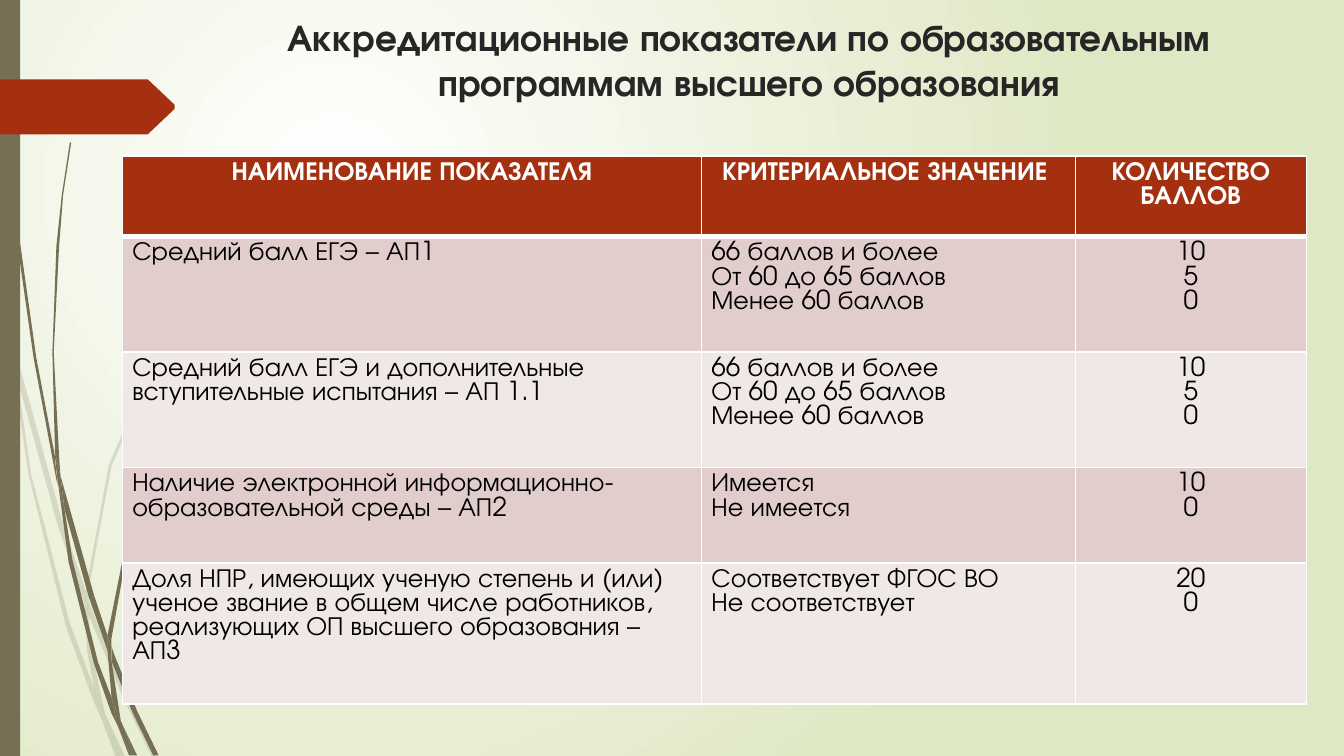
from lxml.etree import SubElement
from pptx import Presentation
from pptx.dml.color import RGBColor
from pptx.enum.shapes import MSO_SHAPE
from pptx.enum.text import MSO_ANCHOR, PP_ALIGN
from pptx.oxml.ns import qn
from pptx.util import Pt

FONT = "TeX Gyre Adventor"
OLIVE, RUST, WHITE = "766F54", "A53010", "FFFFFF"
BANDS = ("E1CDCC", "F0E8E7")
GRID = 0.72  # points per unit of the outlines below

PALE_BLADES = [
    [(8, 263), (6, 241), (0, 211), (0, 224), (8, 258)],
    [(43, 391), (63, 449), (64, 440), (47, 390), (11, 259), (13, 282)],
    [(69, 455), (66, 447), (66, 458), (92, 520), (113, 563), (116, 563), (95, 519)],
    [(89, 563), (93, 563), (79, 533)],
    [(70, 512), (52, 464), (23, 352), (13, 282), (8, 263), (21, 352), (49, 466),
     (69, 520), (76, 536), (74, 530)],
    [(63, 449), (65, 485), (70, 512), (72, 519), (79, 533), (78, 530), (68, 484),
     (66, 458), (66, 456)],
    [(66, 438), (83, 347), (120, 261), (171, 184), (201, 148), (217, 131), (234, 115),
     (217, 131), (201, 148), (171, 183), (118, 261), (81, 346), (64, 438), (64, 440),
     (66, 447)],
    [(76, 536), (86, 563), (89, 563)],
    [(66, 456), (66, 458), (66, 447), (64, 440), (63, 449)],
    [(72, 519), (70, 512), (74, 530), (76, 536), (89, 563), (79, 533)],
]
DARK_BLADES = [
    [(5, 82), (12, 175), (25, 266), (42, 357), (43, 361), (41, 343), (41, 340),
     (27, 266), (14, 174), (6, 82), (3, 36), (3, 0), (2, 0), (3, 36)],
    [(66, 444), (80, 484), (80, 475), (80, 473), (70, 443), (45, 354), (48, 379)],
    [(85, 487), (83, 481), (83, 492), (99, 531), (114, 562), (118, 562), (102, 529)],
    [(83, 519), (73, 493), (54, 417), (48, 379), (43, 358), (51, 418), (70, 494),
     (83, 531), (88, 541), (87, 538)],
    [(45, 354), (44, 340), (40, 262), (44, 183), (47, 145), (53, 106), (52, 106),
     (46, 145), (42, 183), (39, 262), (41, 337)],
    [(100, 562), (102, 562), (91, 539)],
    [(43, 358), (48, 379), (45, 354), (41, 337), (41, 340)],
    [(83, 475), (94, 414), (119, 357), (153, 305), (173, 281), (184, 269), (196, 258),
     (195, 258), (184, 269), (173, 280), (153, 304), (117, 356), (92, 413), (80, 473),
     (83, 481)],
    [(88, 541), (96, 562), (98, 562)],
    [(80, 484), (83, 519), (87, 530), (91, 539), (90, 537), (83, 492), (81, 488)],
    [(80, 484), (81, 488), (83, 492), (83, 481), (80, 473), (80, 475)],
    [(87, 530), (83, 519), (87, 538), (88, 541), (98, 562), (100, 562), (91, 539)],
]
ARROW = [(130, 22), (111, 40), (110, 41), (0, 41), (0, 0), (110, 0), (111, 1), (130, 19)]

COLUMN_WIDTHS = (310.3, 200.2, 123.8)
ROW_HEIGHTS = (43.2, 61.9, 61.9, 51.1, 75.6)
SCORES = "66 баллов и более\nОт 60 до 65 баллов\nМенее 60 баллов"
ROWS = [
    ("НАИМЕНОВАНИЕ ПОКАЗАТЕЛЯ", "КРИТЕРИАЛЬНОЕ ЗНАЧЕНИЕ ", "КОЛИЧЕСТВО БАЛЛОВ"),
    ("Средний балл ЕГЭ – АП1", SCORES, "10\n5\n0"),
    ("Средний балл ЕГЭ и дополнительные вступительные испытания – АП 1.1",
     SCORES, "10\n5\n0"),
    ("Наличие электронной информационно-образовательной среды – АП2",
     "Имеется\nНе имеется", "10\n0"),
    ("Доля НПР, имеющих ученую степень и (или) ученое звание в общем числе "
     "работников, реализующих ОП высшего образования – АП3",
     "Соответствует ФГОС ВО\nНе соответствует", "20\n0"),
]


def color(value):
    return RGBColor.from_string(value)


def paint(shape, fill, opacity=100):
    shape.shadow.inherit = False
    shape.fill.solid()
    shape.fill.fore_color.rgb = color(fill)
    shape.line.fill.background()
    if opacity < 100:
        srgb = shape.fill._xPr.find(qn("a:solidFill"))[0]
        SubElement(srgb, qn("a:alpha"), val=str(opacity * 1000))


def write(frame, text, size=14, fill="000000", bold=False, align=PP_ALIGN.LEFT):
    """Fill a text frame, one paragraph for each line of text."""
    frame.word_wrap = True
    for index, line in enumerate(text.split("\n")):
        paragraph = frame.paragraphs[0] if index == 0 else frame.add_paragraph()
        paragraph.alignment = align
        run = paragraph.add_run()
        run.text = line
        run.font.name = FONT
        run.font.size = Pt(size)
        run.font.bold = bold
        run.font.color.rgb = color(fill)


def add_outline(shapes, points, left, top, fill, opacity=100):
    builder = shapes.build_freeform(*points[0], scale=Pt(GRID))
    builder.add_line_segments(points[1:], close=True)
    paint(builder.convert_to_shape(Pt(left), Pt(top)), fill, opacity)


def add_background(slide):
    fill = slide.background.fill
    fill.gradient()
    for stop, value in zip(fill.gradient_stops, (WHITE, "DFE8C4")):
        stop.color.rgb = color(value)
    gradient = slide.background._cSld.find(".//" + qn("a:gradFill"))
    gradient.remove(gradient.find(qn("a:lin")))
    circle = SubElement(gradient, qn("a:path"), path="circle")
    SubElement(circle, qn("a:fillToRect"), l="50000", t="50000", r="100000", b="100000")


def add_side_decoration(slide, left, top, height):
    for blades, opacity in ((PALE_BLADES, 20), (DARK_BLADES, 100)):
        group = slide.shapes.add_group_shape()
        for blade in blades:
            add_outline(group.shapes, blade, left, top, OLIVE, opacity)
    bar = slide.shapes.add_shape(MSO_SHAPE.RECTANGLE, Pt(left), Pt(top), Pt(10.8), Pt(height))
    paint(bar, OLIVE)
    add_outline(slide.shapes, ARROW, left, top + 42.5, RUST)


def add_title(slide, left, top, width, height):
    box = slide.shapes.add_textbox(Pt(left), Pt(top), Pt(width), Pt(height))
    box.text_frame.margin_left = box.text_frame.margin_right = Pt(5.3)
    box.text_frame.margin_top = box.text_frame.margin_bottom = Pt(2.7)
    box.text_frame.vertical_anchor = MSO_ANCHOR.TOP
    write(box.text_frame,
          "Аккредитационные показатели по образовательным программам высшего образования",
          size=20, fill="262626", bold=True, align=PP_ALIGN.CENTER)


def set_borders(cell, top=1, bottom=1):
    properties = cell._tc.get_or_add_tcPr()
    for side, width in (("L", 1), ("R", 1), ("T", top), ("B", bottom)):
        line = SubElement(properties, qn("a:ln" + side), w=str(Pt(width)))
        SubElement(SubElement(line, qn("a:solidFill")), qn("a:srgbClr"), val=WHITE)


def add_indicator_table(slide, left, top):
    table = slide.shapes.add_table(
        len(ROWS), len(COLUMN_WIDTHS), Pt(left), Pt(top),
        Pt(sum(COLUMN_WIDTHS)), Pt(sum(ROW_HEIGHTS))).table
    for column, width in zip(table.columns, COLUMN_WIDTHS):
        column.width = Pt(width)
    for row_index, (texts, height) in enumerate(zip(ROWS, ROW_HEIGHTS)):
        table.rows[row_index].height = Pt(height)
        header = row_index == 0
        for column_index, text in enumerate(texts):
            cell = table.cell(row_index, column_index)
            cell.margin_left = cell.margin_right = Pt(5.3)
            cell.margin_top = cell.margin_bottom = Pt(2.7)
            set_borders(cell, top=3 if row_index == 1 else 1, bottom=3 if header else 1)
            cell.fill.solid()
            cell.fill.fore_color.rgb = color(RUST if header else BANDS[(row_index - 1) % 2])
            centered = header or column_index == 2
            write(cell.text_frame, text, fill=WHITE if header else "000000", bold=header,
                  align=PP_ALIGN.CENTER if centered else PP_ALIGN.LEFT)


def main():
    presentation = Presentation()
    presentation.slide_width, presentation.slide_height = Pt(720), Pt(405)
    slide = presentation.slides.add_slide(presentation.slide_layouts[6])
    add_background(slide)
    add_side_decoration(slide, 0, 0, 405)
    add_title(slide, 87.1, 5, 628.6, 62.6)
    add_indicator_table(slide, 65.6, 83.6)
    presentation.save("out.pptx")


if __name__ == "__main__":
    main()
